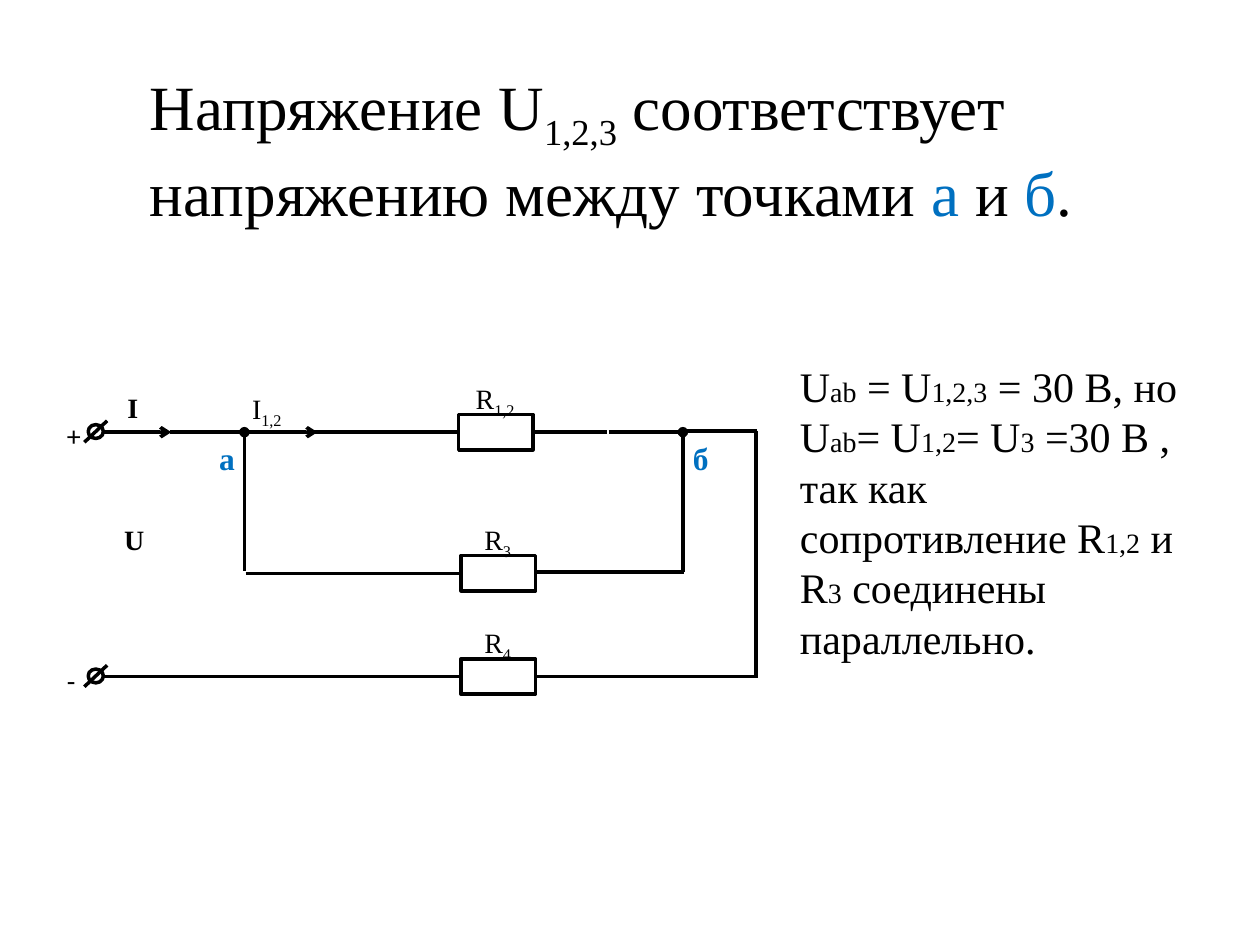
from lxml import etree
from pptx import Presentation
from pptx.dml.color import RGBColor
from pptx.enum import shapes, text
from pptx.oxml import ns
from pptx.util import Inches, Pt

COLORS = {"ink": "000000", "point": "0070C0", "paper": "FFFFFF"}
SERIF = "Times New Roman"
STEP = 0.59  # length of one wire segment
TOP, MIDDLE, BOTTOM = 3.43, 4.55, 5.37
NODE_A, NODE_B, RIGHT = 1.94, 5.42, 6.0
TERMINAL = 0.77
RESISTORS = [(3.64, 3.29), (3.66, 4.41), (3.66, 5.23)]

# from x, from y, to x, to y, end mark
WIRES = [
    (TERMINAL, TOP, 1.36, TOP, "arrow"),
    (1.35, TOP, NODE_A, TOP, "oval"),
    (NODE_A, TOP, 2.52, TOP, "arrow"),
    (4.83, TOP, NODE_B, TOP, "oval"),
    (NODE_A, 3.42, NODE_A, 4.53, None),
    (NODE_B, TOP, NODE_B, 4.54, None),
    (RIGHT, 3.42, RIGHT, BOTTOM, None),
]
# start x, y, number of segments
WIRE_RUNS = [
    (2.46, TOP, 2), (4.23, TOP, 1), (NODE_B, 3.42, 1),
    (1.95, MIDDLE, 3), (4.25, 4.54, 2),
    (TERMINAL, BOTTOM, 5), (4.25, BOTTOM, 3),
]
LABEL = {"size": Pt(16), "name": SERIF}
SIGN = {"size": Pt(16), "name": "Calibri"}
BOLD = {**LABEL, "bold": True}
POINT = {"size": Pt(18), "name": SERIF, "bold": True}


def set_font(font, values, color="ink"):
    for name, value in values.items():
        setattr(font, name, value)
    font.color.rgb = RGBColor.from_string(COLORS[color])


def add_run(paragraph, words, values, color="ink", subscript=False):
    run = paragraph.add_run()
    run.text = words
    set_font(run.font, values, color)
    if subscript:
        run.font._element.set("baseline", "-25000")


def add_wire(slide, x1, y1, x2, y2, end=None):
    wire = slide.shapes.add_connector(
        shapes.MSO_CONNECTOR.STRAIGHT,
        Inches(x1), Inches(y1), Inches(x2), Inches(y2))
    wire.line.color.rgb = RGBColor.from_string(COLORS["ink"])
    wire.line.width = Pt(2)
    if end:
        etree.SubElement(wire.line._get_or_add_ln(), ns.qn("a:tailEnd"), type=end)
    etree.SubElement(wire._element.spPr, ns.qn("a:effectLst"))


def add_wire_run(slide, x, y, count):
    for index in range(count):
        start = x + index * STEP
        add_wire(slide, start, y, start + STEP, y)


def add_outline(slide, preset, x, y, width, height):
    shape = slide.shapes.add_shape(
        preset, Inches(x), Inches(y), Inches(width), Inches(height))
    shape.shadow.inherit = False
    shape.fill.solid()
    shape.fill.fore_color.rgb = RGBColor.from_string(COLORS["paper"])
    shape.line.color.rgb = RGBColor.from_string(COLORS["ink"])
    shape.line.width = Pt(2)


def add_terminal(slide, y):
    add_outline(slide, shapes.MSO_SHAPE.FLOWCHART_CONNECTOR, 0.7, y - 0.06, 0.12, 0.11)
    add_wire(slide, 0.85, y - 0.09, 0.67, y + 0.08)


def add_text_box(slide, x, y, width, height):
    box = slide.shapes.add_textbox(Inches(x), Inches(y), Inches(width), Inches(height))
    box.text_frame.word_wrap = True
    return box.text_frame


def add_label(slide, place, words, values, subscript="", centered=False, color="ink"):
    frame = add_text_box(slide, *place)
    if color == "ink":
        margins = {"margin_left": 0.15, "margin_right": 0.15,
                   "margin_top": 0.07, "margin_bottom": 0.07}
        for name, value in margins.items():
            setattr(frame, name, Inches(value))
    paragraph = frame.paragraphs[0]
    paragraph.line_spacing = 1.15
    paragraph.space_after = Pt(10)
    if centered:
        paragraph.alignment = text.PP_ALIGN.CENTER
    add_run(paragraph, words, values, color)
    if subscript:
        add_run(paragraph, subscript, values, subscript=True)


def add_title(slide):
    title = slide.shapes.title
    title.left, title.top = Inches(1.09), Inches(0.55)
    title.width, title.height = Inches(8.37), Inches(1.25)
    title.text_frame.vertical_anchor = text.MSO_ANCHOR.MIDDLE
    paragraph = title.text_frame.paragraphs[0]
    paragraph.alignment = text.PP_ALIGN.LEFT
    values = {"size": Pt(36), "name": SERIF}
    add_run(paragraph, "Напряжение U", values)
    add_run(paragraph, "1,2,3", values, subscript=True)
    add_run(paragraph, " соответствует напряжению между точками ", values)
    add_run(paragraph, "a ", values, "point")
    add_run(paragraph, "и ", values)
    add_run(paragraph, "б", values, "point")
    add_run(paragraph, ".", values)


def add_explanation(slide):
    """Full-size words and small indices alternate in each paragraph."""
    paragraphs = [
        ["U", "ab", " = U", "1,2,3", " = 30 B, но"],
        ["U", "ab", "= U", "1,2", "= U", "3", " =30 В , так как сопротивление R",
         "1,2", " и R", "3", " соединены параллельно."],
    ]
    frame = add_text_box(slide, 6.25, 2.81, 3.28, 2.77)
    for number, pieces in enumerate(paragraphs):
        paragraph = frame.add_paragraph() if number else frame.paragraphs[0]
        for index, words in enumerate(pieces):
            size = Pt(16) if index % 2 else Pt(24)
            add_run(paragraph, words, {"size": size, "name": SERIF})


def add_circuit(slide):
    for wire in WIRES:
        add_wire(slide, *wire)
    for wire_run in WIRE_RUNS:
        add_wire_run(slide, *wire_run)
    for x, y in RESISTORS:
        add_outline(slide, shapes.MSO_SHAPE.RECTANGLE, x, y, STEP, 0.28)
    for y in (TOP, BOTTOM):
        add_terminal(slide, y)


def add_circuit_labels(slide):
    add_label(slide, (0.38, 3.21, 0.39, 0.39), "+", SIGN)
    add_label(slide, (0.38, 5.16, 0.72, 0.68), "-", SIGN)
    add_label(slide, (0.58, 2.99, 0.95, 0.43), "I", BOLD, centered=True)
    add_label(slide, (0.59, 4.04, 0.95, 0.43), "U", BOLD, centered=True)
    add_label(slide, (1.85, 2.99, 0.82, 0.66), "I", LABEL, "1,2")
    for (x, y), index in zip(RESISTORS, ("1,2", "3", "4")):
        add_label(slide, (x - 0.18, y - 0.38, 0.94, 0.53), "R", LABEL, index, centered=True)
    for x, name in ((1.64, "a"), (5.4, "б")):
        add_label(slide, (x, 3.39, 0.31, 0.39), name, POINT, color="point")


def main():
    presentation = Presentation()
    presentation.slide_width, presentation.slide_height = Inches(10), Inches(7.5)
    slide = presentation.slides.add_slide(presentation.slide_layouts[5])
    add_title(slide)
    add_circuit(slide)
    add_circuit_labels(slide)
    add_explanation(slide)
    presentation.save("out.pptx")


if __name__ == "__main__":
    main()
